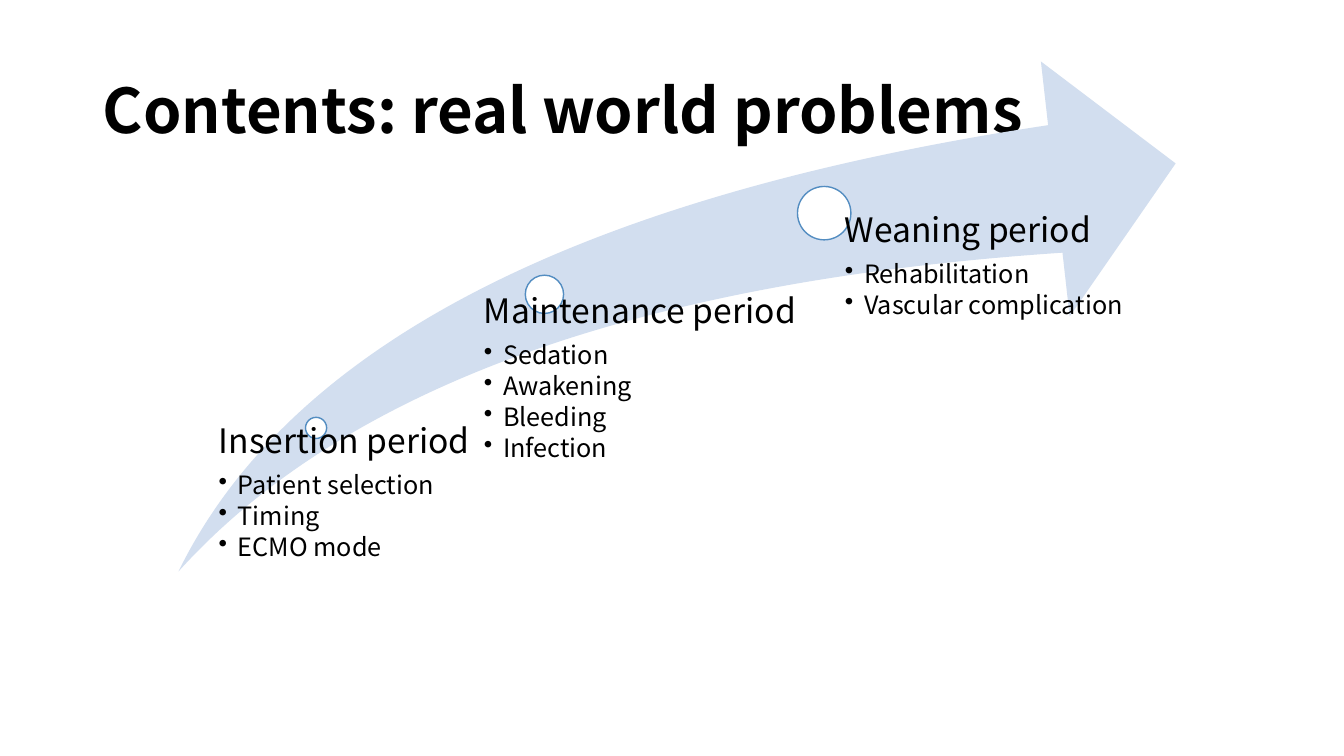
from dataclasses import dataclass

from lxml.etree import SubElement
from pptx import Presentation
from pptx.dml.color import RGBColor
from pptx.enum.shapes import MSO_SHAPE
from pptx.enum.text import MSO_ANCHOR, PP_ALIGN
from pptx.oxml.ns import qn
from pptx.shapes.autoshape import Shape
from pptx.slide import Slide
from pptx.text.text import TextFrame
from pptx.util import Inches, Pt


@dataclass(frozen=True)
class Theme:
    font: str = "Noto Sans CJK KR"
    ink: RGBColor = RGBColor(0, 0, 0)
    swoosh: RGBColor = RGBColor(0xD2, 0xDE, 0xEF)
    dot: RGBColor = RGBColor(0xFF, 0xFF, 0xFF)
    ring: RGBColor = RGBColor(0x53, 0x8D, 0xC1)
    title: float = 44
    head: float = 24
    item: float = 18
    leading: float = 0.9


@dataclass(frozen=True)
class Box:
    left: float
    top: float
    width: float
    height: float

    def inches(self) -> tuple[int, ...]:
        return tuple(map(Inches, (self.left, self.top, self.width, self.height)))


@dataclass(frozen=True)
class Stage:
    head: str
    items: tuple[str, ...]
    dot: Box
    text: Box
    inset: float


THEME = Theme()
TITLE = "Contents: real world problems"
TITLE_BOX = Box(0.92, 0.4, 11.5, 1.45)
SWOOSH_BOX = Box(1.77, 0.61, 9.89, 5.06)
STAGES = (
    Stage("Insertion period", ("Patient selection", "Timing", "ECMO mode"),
          Box(3.03, 4.14, 0.21, 0.21), Box(2.06, 4.21, 3.8, 1.46), 0.11),
    Stage("Maintenance period", ("Sedation", "Awakening", "Bleeding", "Infection"),
          Box(5.21, 2.73, 0.38, 0.38), Box(4.6, 2.92, 3.3, 2.75), 0.2),
    Stage("Weaning period", ("Rehabilitation", "Vascular complication"),
          Box(7.91, 1.85, 0.53, 0.53), Box(8.1, 2.12, 3.33, 3.51), 0.28),
)


def apply(target: object, form: dict[str, object]) -> None:
    """Set each named attribute of the target."""
    for name, value in form.items():
        setattr(target, name, value)


def write(frame: TextFrame, row: int, text: str, size: float,
          after: float = 0, bold: bool = False, bullet: bool = False) -> None:
    """Fill one paragraph; after is a share of the type size."""
    para = frame.paragraphs[0] if row == 0 else frame.add_paragraph()
    apply(para, {"alignment": PP_ALIGN.LEFT, "line_spacing": THEME.leading,
                 "space_before": Pt(0), "space_after": Pt(size * after)})
    if bullet:
        para.level = 1
        props = para._p.get_or_add_pPr()
        props.set("marL", str(Inches(0.19)))
        props.set("indent", str(Inches(-0.19)))
        SubElement(props, qn("a:buChar")).set("char", "•")
    run = para.add_run()
    run.text = text
    apply(run.font, {"name": THEME.font, "size": Pt(size), "bold": bold})
    run.font.color.rgb = THEME.ink


def add_form(slide: Slide, kind: MSO_SHAPE, box: Box, fill: RGBColor) -> Shape:
    shape = slide.shapes.add_shape(kind, *box.inches())
    shape.shadow.inherit = False
    shape.fill.solid()
    shape.fill.fore_color.rgb = fill
    shape.line.fill.background()
    return shape


def add_title(slide: Slide) -> None:
    title = slide.shapes.title
    apply(title, dict(zip(("left", "top", "width", "height"), TITLE_BOX.inches())))
    apply(title.text_frame, {"vertical_anchor": MSO_ANCHOR.MIDDLE, "word_wrap": True})
    write(title.text_frame, 0, TITLE, THEME.title, bold=True)


def add_swoosh(slide: Slide) -> None:
    swoosh = add_form(slide, MSO_SHAPE.SWOOSH_ARROW, SWOOSH_BOX, THEME.swoosh)
    for index in range(2):
        swoosh.adjustments[index] = 0.25


def add_stage(slide: Slide, stage: Stage) -> None:
    dot = add_form(slide, MSO_SHAPE.OVAL, stage.dot, THEME.dot)
    dot.line.color.rgb = THEME.ring
    dot.line.width = Pt(1)

    frame = slide.shapes.add_textbox(*stage.text.inches()).text_frame
    apply(frame, {"word_wrap": True, "vertical_anchor": MSO_ANCHOR.TOP,
                  "margin_left": Inches(stage.inset), "margin_top": 0,
                  "margin_right": 0, "margin_bottom": 0})
    write(frame, 0, stage.head, THEME.head, after=0.35)
    for row, item in enumerate(stage.items, 1):
        write(frame, row, item, THEME.item, after=0.15, bullet=True)


def main() -> None:
    deck = Presentation()
    apply(deck, {"slide_width": Inches(13.33), "slide_height": Inches(7.5)})
    slide = deck.slides.add_slide(deck.slide_layouts[5])
    add_title(slide)
    add_swoosh(slide)
    for stage in STAGES:
        add_stage(slide, stage)
    deck.save("out.pptx")


if __name__ == "__main__":
    main()
